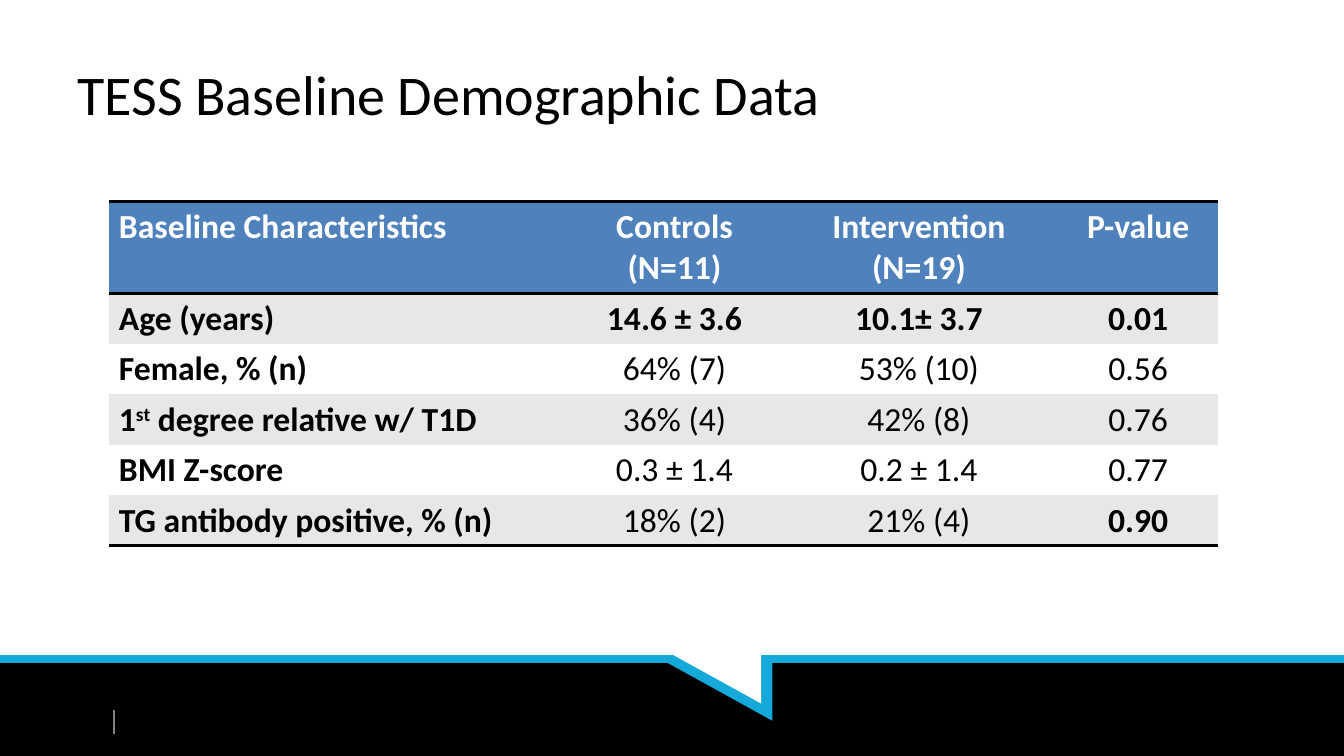
"""Build the TESS baseline demographics slide."""
import pptx
import pptx.dml.color
import pptx.enum.shapes
import pptx.enum.text
import pptx.oxml
import pptx.oxml.ns
import pptx.util
from pptx.util import Inches

TITLE = "TESS Baseline Demographic Data"
ROWS = [
    ("Baseline Characteristics", "Controls\n(N=11)", "Intervention\n(N=19)", "P-value"),
    ("Age (years)", "14.6 ± 3.6", "10.1± 3.7", "0.01"),
    ("Female, % (n)", "64% (7)", "53% (10)", "0.56"),
    (("1", "st", " degree relative w/ T1D"), "36% (4)", "42% (8)", "0.76"),
    ("BMI Z-score", "0.3 ± 1.4", "0.2 ± 1.4", "0.77"),
    ("TG antibody positive, % (n)", "18% (2)", "21% (4)", "0.90"),
]
BOLD_ROWS = {0, 1}
BOLD_CELLS = {(5, 3)}
COLUMN_WIDTHS = [4.57, 2.08, 2.77, 1.58]
HEADER_HEIGHT, ROW_HEIGHT = 0.91, 0.5
TABLE_LEFT, TABLE_TOP = 1.08, 2
THEME = {
    "font": "Calibri", "title_size": 40, "table_size": 24, "rule_width": 2,
    "black": "000000", "white": "FFFFFF", "header": "4F81BD", "band": "E7E7E7",
    "accent": "14A9D8", "divider": "808080",
}
SHAPES = pptx.enum.shapes.MSO_SHAPE
BAND_TOP = 6.54
FOOTER_BAND = (SHAPES.RECTANGLE, (0, BAND_TOP, 13.33, 0.96), 0, "black")
NOTCH = [
    (SHAPES.RIGHT_TRIANGLE, (6.61, 6.57, 1.05, 0.58), 180, "accent"),
    (SHAPES.RIGHT_TRIANGLE, (6.5, 6.4, 1.05, 0.58), 180, "white"),
]
BAND_EDGE = ((0, BAND_TOP, 13.33, BAND_TOP), "accent", 6)
DIVIDER = ((1.13, 7.04, 1.13, 7.28), "divider", 1)


def color(name):
    return pptx.dml.color.RGBColor.from_string(THEME[name])


def paint(fill, name):
    fill.solid()
    fill.fore_color.rgb = color(name)


def add_block(slide, kind, box, rotation, fill):
    shape = slide.shapes.add_shape(kind, *map(Inches, box))
    shape.rotation = rotation
    shape.shadow.inherit = False
    paint(shape.fill, fill)
    shape.line.fill.background()


def add_line(slide, ends, name, width):
    kind = pptx.enum.shapes.MSO_CONNECTOR.STRAIGHT
    line = slide.shapes.add_connector(kind, *map(Inches, ends))
    line.line.color.rgb = color(name)
    line.line.width = pptx.util.Pt(width)
    line.element.spPr.append(pptx.oxml.parse_xml(
        f"<a:effectLst {pptx.oxml.ns.nsdecls('a')}/>"))


def write(paragraph, pieces, size, name, bold=False):
    values = {"name": THEME["font"], "size": pptx.util.Pt(THEME[size]), "bold": bold}
    for index, piece in enumerate(pieces):
        run = paragraph.add_run()
        run.text = piece
        for key, value in values.items():
            setattr(run.font, key, value)
        run.font.color.rgb = color(name)
        if index == 1:
            run._r.get_or_add_rPr().set("baseline", "30000")


def set_borders(cell, ruled_sides):
    width = pptx.util.Pt(THEME["rule_width"])
    rule = f'<a:solidFill><a:srgbClr val="{THEME["black"]}"/></a:solidFill>'
    for side in "LRTB":
        paint_xml = rule if side in ruled_sides else "<a:noFill/>"
        cell._tc.get_or_add_tcPr().append(pptx.oxml.parse_xml(
            f'<a:ln{side} {pptx.oxml.ns.nsdecls("a")} w="{width}">{paint_xml}</a:ln{side}>'))


def fill_cell(cell, row, column, content):
    ruled_sides = {0: "TB", 1: "T", len(ROWS) - 1: "B"}.get(row, "")
    set_borders(cell, ruled_sides)
    paint(cell.fill, "header" if row == 0 else "band" if row % 2 else "white")
    bold = column == 0 or row in BOLD_ROWS or (row, column) in BOLD_CELLS
    lines = [[line] for line in content.split("\n")] if isinstance(content, str) else [content]
    alignments = pptx.enum.text.PP_ALIGN
    for index, pieces in enumerate(lines):
        frame = cell.text_frame
        paragraph = frame.add_paragraph() if index else frame.paragraphs[0]
        paragraph.alignment = alignments.CENTER if column else alignments.LEFT
        write(paragraph, pieces, "table_size", "black" if row else "white", bold)


def add_demographics(slide):
    heights = [HEADER_HEIGHT] + [ROW_HEIGHT] * (len(ROWS) - 1)
    box = (TABLE_LEFT, TABLE_TOP, sum(COLUMN_WIDTHS), sum(heights))
    table = slide.shapes.add_table(len(ROWS), len(COLUMN_WIDTHS), *map(Inches, box)).table
    table.first_row = table.horz_banding = False
    for column, width in zip(table.columns, COLUMN_WIDTHS):
        column.width = Inches(width)
    for row, height in zip(table.rows, heights):
        row.height = Inches(height)
    for row, contents in enumerate(ROWS):
        for column, content in enumerate(contents):
            fill_cell(table.cell(row, column), row, column, content)


def add_title(slide):
    frame = slide.shapes.add_textbox(*map(Inches, (0.67, 0.3, 12, 1.25))).text_frame
    frame.word_wrap = True
    frame.vertical_anchor = pptx.enum.text.MSO_ANCHOR.MIDDLE
    write(frame.paragraphs[0], [TITLE], "title_size", "black")


def main():
    presentation = pptx.Presentation()
    presentation.slide_width = Inches(13.33)
    presentation.slide_height = Inches(7.5)
    slide = presentation.slides.add_slide(presentation.slide_layouts[6])
    add_block(slide, *FOOTER_BAND)
    add_line(slide, *BAND_EDGE)
    for triangle in NOTCH:
        add_block(slide, *triangle)
    add_line(slide, *DIVIDER)
    add_title(slide)
    add_demographics(slide)
    presentation.save("out.pptx")


if __name__ == "__main__":
    main()
